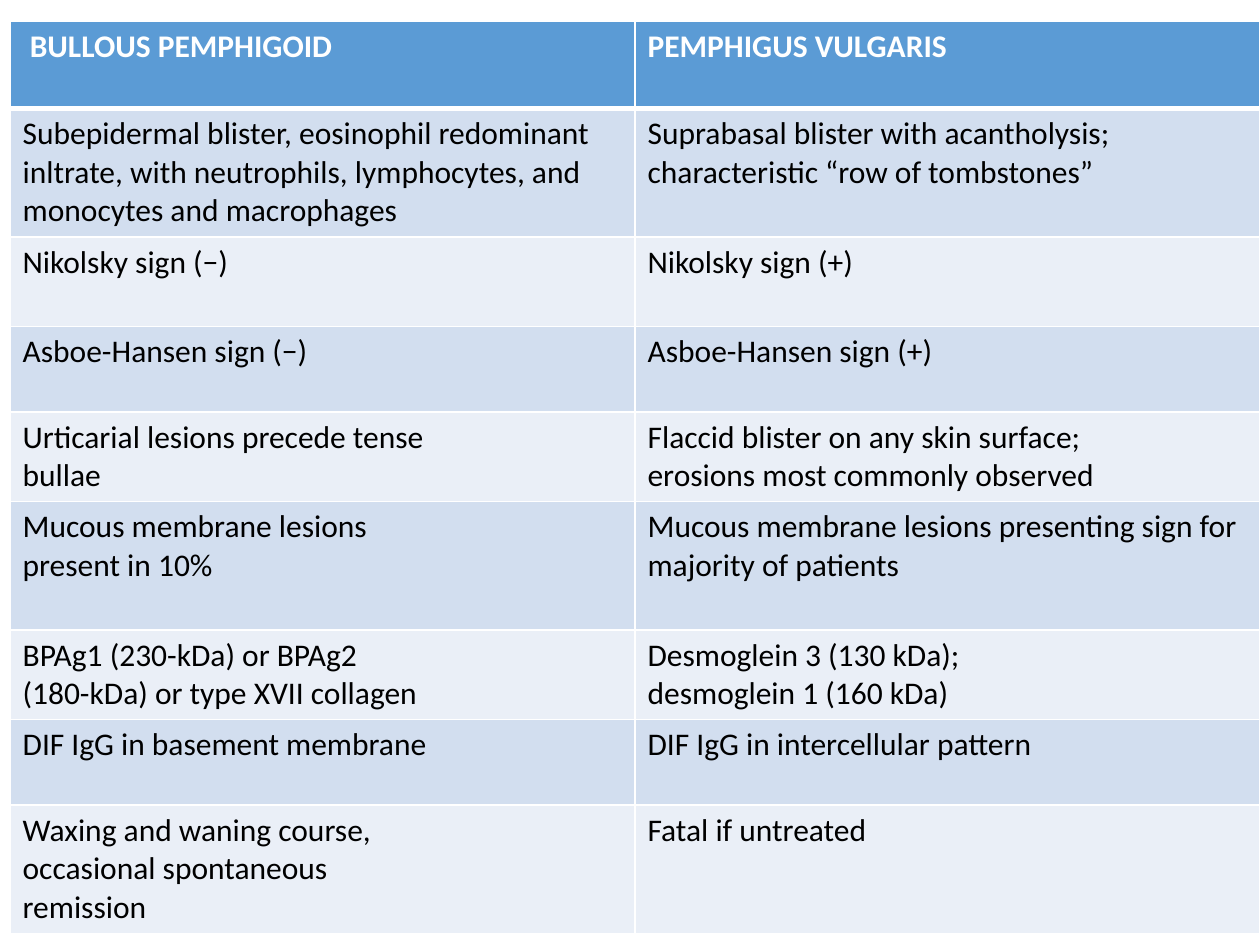
import pptx
import pptx.dml.color
import pptx.oxml.ns
import pptx.util
from lxml import etree

Inches, Pt = pptx.util.Inches, pptx.util.Pt

# Content: (row height, left paragraphs, right paragraphs)
ROWS = [
    (0.69, [" BULLOUS PEMPHIGOID"], ["PEMPHIGUS VULGARIS"]),
    (1.02, ["Subepidermal blister, eosinophil redominant inltrate, with neutrophils, "
            "lymphocytes, and monocytes and macrophages"],
     ["Suprabasal blister with acantholysis; characteristic “row of tombstones”"]),
    (0.71, ["Nikolsky sign (−)"], ["Nikolsky sign (+)"]),
    (0.68, ["Asboe-Hansen sign (−)"], ["Asboe-Hansen sign (+)"]),
    (0.71, ["Urticarial lesions precede tense", "bullae"],
     ["Flaccid blister on any skin surface;", "erosions most commonly observed"]),
    (1.02, ["Mucous membrane lesions", "present in 10%"],
     ["Mucous membrane lesions presenting sign for majority of patients"]),
    (0.71, ["BPAg1 (230-kDa) or BPAg2", "(180-kDa) or type XVII collagen"],
     ["Desmoglein 3 (130 kDa);", "desmoglein 1 (160 kDa)"]),
    (0.68, ["DIF IgG in basement membrane"], ["DIF IgG in intercellular pattern"]),
    (1.02, ["Waxing and waning course,", "occasional spontaneous", "remission"],
     ["Fatal if untreated"]),
]
HEADER_FILL, BAND_FILLS = "5B9BD5", ("EAEFF7", "D2DEEF")
LEFT, TOP, COL_W = 0.08, 0.17, 4.96


def color(value):
    return pptx.dml.color.RGBColor.from_string(value)


def set_border(cell, side, width, value):
    qn = pptx.oxml.ns.qn
    ln = etree.SubElement(cell._tc.get_or_add_tcPr(), qn("a:ln" + side), w=str(Pt(width)))
    fill = etree.SubElement(ln, qn("a:solidFill"))
    etree.SubElement(fill, qn("a:srgbClr"), val=value)


def fill_cell(cell, paragraphs, row):
    header = row == 0
    # Borders come before the fill in the cell properties
    for side in "LRTB":
        thick = (header and side == "B") or (row == 1 and side == "T")
        set_border(cell, side, 3 if thick else 1, "FFFFFF")
    cell.fill.solid()
    cell.fill.fore_color.rgb = color(HEADER_FILL if header else BAND_FILLS[row % 2])
    tf = cell.text_frame
    for i, text in enumerate(paragraphs):
        p = tf.add_paragraph() if i else tf.paragraphs[0]
        r = p.add_run()
        r.text = text
        r.font.name = "Calibri"
        r.font.size = Pt(18)
        r.font.bold = header
        r.font.color.rgb = color("FFFFFF" if header else "000000")


prs = pptx.Presentation()
prs.slide_width, prs.slide_height = Inches(10), Inches(7.5)
s = prs.slides.add_slide(prs.slide_layouts[6])

# Comparison table
height = sum(row[0] for row in ROWS)
table = s.shapes.add_table(len(ROWS), 2, Inches(LEFT), Inches(TOP),
                           Inches(2 * COL_W), Inches(height)).table
for column in table.columns:
    column.width = Inches(COL_W)
for i, (row_height, *texts) in enumerate(ROWS):
    table.rows[i].height = Inches(row_height)
    for j, paragraphs in enumerate(texts):
        fill_cell(table.cell(i, j), paragraphs, i)

prs.save("out.pptx")
